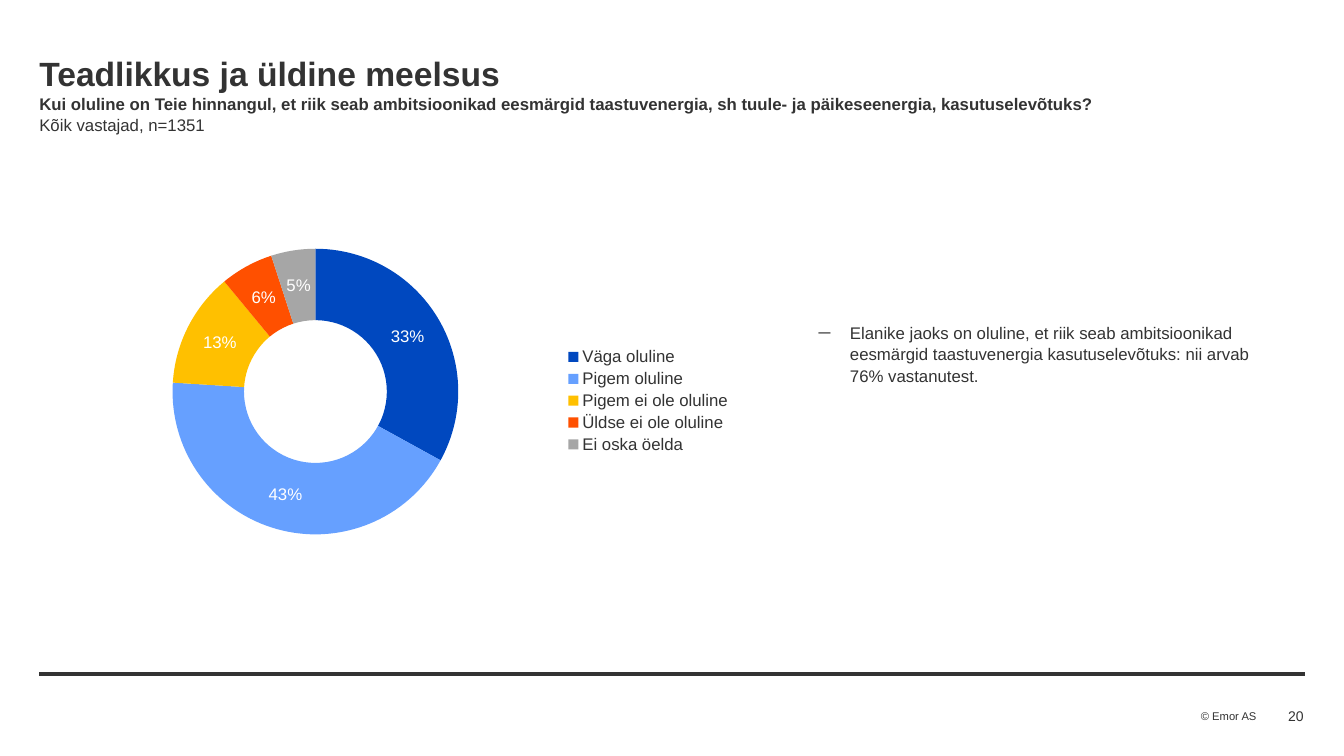
from lxml import etree
from pptx import Presentation
from pptx.chart.data import CategoryChartData
from pptx.dml.color import RGBColor
from pptx.enum.chart import XL_CHART_TYPE as ChartType, XL_LEGEND_POSITION as LegendPosition
from pptx.enum.shapes import MSO_CONNECTOR as Connector
from pptx.enum.text import MSO_ANCHOR as Anchor, PP_ALIGN as Align
from pptx.oxml.ns import qn
from pptx.util import Inches, Pt

COLORS = {"text": "333333", "label": "FFFFFF", "very": "0048BF", "rather": "66A0FF",
          "rather_not": "FFC000", "not_at_all": "FF5000", "unsure": "A6A6A6"}
HEADING = [
    ("Teadlikkus ja üldine meelsus", 24, True),
    ("Kui oluline on Teie hinnangul, et riik seab ambitsioonikad eesmärgid taastuvenergia, "
     "sh tuule- ja päikeseenergia, kasutuselevõtuks?", 12, True),
    ("Kõik vastajad, n=1351", 12, False),
]
FINDING = [("Elanike jaoks on oluline, et riik seab ambitsioonikad eesmärgid taastuvenergia "
            "kasutuselevõtuks: nii arvab 76% vastanutest.", 12, False)]
COPYRIGHT = [("© Emor AS", 8, False)]
PAGE_NUMBER = [("20", 10, False)]
ANSWERS = [
    ("Väga oluline", 33, "very"),
    ("Pigem oluline", 43, "rather"),
    ("Pigem ei ole oluline", 13, "rather_not"),
    ("Üldse ei ole oluline", 6, "not_at_all"),
    ("Ei oska öelda", 5, "unsure"),
]
PLOT_AREA = {"layoutTarget": "inner", "xMode": "edge", "yMode": "edge",
             "x": 0.135, "y": 0.089, "w": 0.434, "h": 0.773}


def rgb(name):
    return RGBColor.from_string(COLORS[name])


def style_font(font, size, color="text", bold=False):
    formats = {"name": "Arial", "size": Pt(size), "bold": bold}
    for attribute, value in formats.items():
        setattr(font, attribute, value)
    font.color.rgb = rgb(color)


def add_text(slide, box, lines, wrap=True, spacing=1.0, align=Align.LEFT,
             anchor=Anchor.TOP, bullet=None):
    frame = slide.shapes.add_textbox(*map(Inches, box)).text_frame
    formats = {"word_wrap": wrap, "vertical_anchor": anchor, "margin_left": 0,
               "margin_right": 0, "margin_top": 0, "margin_bottom": 0}
    for attribute, value in formats.items():
        setattr(frame, attribute, value)
    paragraph = frame.paragraphs[0]
    paragraph.alignment = align
    paragraph.line_spacing = spacing
    if bullet:
        properties = paragraph._p.get_or_add_pPr()
        properties.set("marL", str(Inches(0.31)))
        properties.set("indent", str(-Inches(0.31)))
        etree.SubElement(properties, qn("a:buFont")).set("typeface", "Arial")
        etree.SubElement(properties, qn("a:buChar")).set("char", bullet)
    for index, (text, size, bold) in enumerate(lines):
        if index:
            paragraph.add_line_break()
        run = paragraph.add_run()
        run.text = text
        style_font(run.font, size, bold=bold)


def add_answer_chart(slide):
    data = CategoryChartData(number_format="0")
    data.categories = [answer for answer, share, color in ANSWERS]
    data.add_series("Series 1", [share for answer, share, color in ANSWERS])
    box = map(Inches, (0.83, 2.14, 6.53, 3.67))
    chart = slide.shapes.add_chart(ChartType.DOUGHNUT, *box, data).chart
    style_font(chart.font, 12)
    chart.has_title = False
    chart.has_legend = True
    chart.legend.position = LegendPosition.RIGHT
    chart.legend.include_in_layout = False
    style_font(chart.legend.font, 12)

    plot = chart.plots[0]
    plot.vary_by_categories = True
    plot._element.find(qn("c:holeSize")).set("val", "65")
    for index, (answer, share, color) in enumerate(ANSWERS):
        point = plot.series[0].points[index]
        point.format.fill.solid()
        point.format.fill.fore_color.rgb = rgb(color)
        point.format.line.fill.background()
    labels = plot.series[0].data_labels
    formats = {"show_value": True, "show_percentage": False, "show_category_name": False,
               "show_legend_key": False, "number_format": "0\\%",
               "number_format_is_linked": False}
    for attribute, value in formats.items():
        setattr(labels, attribute, value)
    style_font(labels.font, 12, "label")

    plot_area = chart._chartSpace.chart.plotArea
    for layout in plot_area.findall(qn("c:layout")):
        plot_area.remove(layout)
    layout = etree.Element(qn("c:layout"))
    plot_area.insert(0, layout)
    manual = etree.SubElement(layout, qn("c:manualLayout"))
    for name, value in PLOT_AREA.items():
        etree.SubElement(manual, qn(f"c:{name}")).set("val", str(value))


def add_footer_line(slide):
    ends = map(Inches, (0.39, 6.69, 12.94, 6.69))
    connector = slide.shapes.add_connector(Connector.STRAIGHT, *ends)
    connector.line.color.rgb = rgb("text")
    connector.line.width = Pt(3)
    etree.SubElement(connector._element.spPr, qn("a:effectLst"))


def main():
    presentation = Presentation()
    presentation.slide_width = Inches(13.33)
    presentation.slide_height = Inches(7.5)
    slide = presentation.slides.add_slide(presentation.slide_layouts[6])
    add_footer_line(slide)
    add_text(slide, (11.91, 7.04, 0.56, 0.13), COPYRIGHT, wrap=False)
    add_text(slide, (0.39, 0.51, 12.54, 0.44), HEADING, spacing=1.04)
    add_answer_chart(slide)
    add_text(slide, (11.87, 6.99, 1.06, 0.22), PAGE_NUMBER, align=Align.RIGHT,
             anchor=Anchor.MIDDLE)
    add_text(slide, (8.12, 3.19, 4.39, 0.61), FINDING, spacing=1.06, bullet="─")
    presentation.save("out.pptx")


if __name__ == "__main__":
    main()
